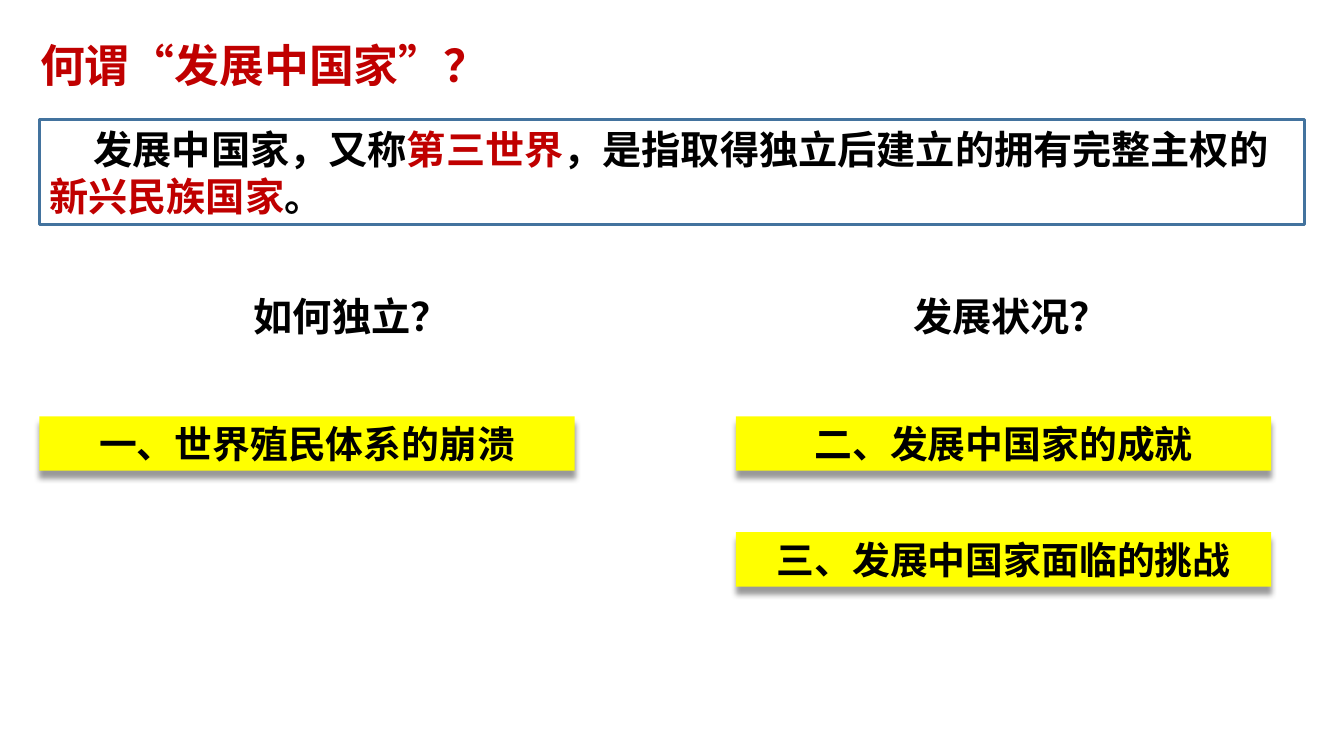
from dataclasses import dataclass

from lxml import etree
from pptx import Presentation
from pptx.dml.color import RGBColor
from pptx.enum.shapes import MSO_SHAPE
from pptx.enum.text import MSO_ANCHOR, PP_ALIGN
from pptx.oxml.ns import qn
from pptx.util import Inches, Pt

RECT = MSO_SHAPE.RECTANGLE
TOP, MIDDLE = MSO_ANCHOR.TOP, MSO_ANCHOR.MIDDLE
LEFT, CENTER = PP_ALIGN.LEFT, PP_ALIGN.CENTER
WIDTH, HEIGHT = Inches(13.33), Inches(7.5)


@dataclass(frozen=True)
class Theme:
    ink: str = "000000"
    red: str = "C00000"
    blue: str = "43739E"
    yellow: str = "FFFF00"
    title: int = 32
    body: int = 28
    label: int = 27
    latin: str = "Arial"
    asian: str = "Noto Sans CJK SC"


THEME = Theme()


def place(left, top, width, height):
    return [round(side * share / 100) for side, share in
            zip((WIDTH, HEIGHT, WIDTH, HEIGHT), (left, top, width, height))]


def write(shape, parts, size, latin=THEME.asian, align=LEFT, anchor=TOP,
          inset=(0.1, 0.05), wrap=True, indent=0, spacing=None, after=0):
    frame = shape.text_frame
    frame.word_wrap = wrap
    frame.vertical_anchor = anchor
    frame.margin_left = frame.margin_right = Inches(inset[0])
    frame.margin_top = frame.margin_bottom = Inches(inset[1])
    para = frame.paragraphs[0]
    para.alignment = align
    para.line_spacing = spacing
    para.space_after = Pt(after)
    if indent:
        para._p.get_or_add_pPr().set("indent", str(Inches(indent)))
    for text, color in parts:
        run = para.add_run()
        run.text = text
        font = run.font
        font.size, font.bold, font.name = Pt(size), True, latin
        font.color.rgb = RGBColor.from_string(color)
        east = etree.SubElement(run._r.get_or_add_rPr(), qn("a:ea"))
        east.set("typeface", THEME.asian)


def add_text(slide, box, text, color, size, **style):
    shape = slide.shapes.add_textbox(*place(*box))
    write(shape, [(text, color)], size, **style)


def add_rect(slide, box, fill=None, line=None):
    shape = slide.shapes.add_shape(RECT, *place(*box))
    shape.shadow.inherit = False
    if fill:
        shape.fill.solid()
        shape.fill.fore_color.rgb = RGBColor.from_string(fill)
    else:
        shape.fill.background()
    if line:
        shape.line.color.rgb = RGBColor.from_string(line)
        shape.line.width = Pt(2.25)
    else:
        shape.line.fill.background()
    return shape


def add_shadow(shape):
    effects = shape.element.spPr.find(qn("a:effectLst"))
    outer = etree.SubElement(
        effects, qn("a:outerShdw"), blurRad=str(Pt(4)), dist=str(Pt(5)),
        dir="5400000", rotWithShape="0")
    color = etree.SubElement(outer, qn("a:srgbClr"), val=THEME.ink)
    etree.SubElement(color, qn("a:alpha"), val="40000")


def add_label(slide, left, top, text):
    shape = add_rect(slide, (left, top, 39.83, 7.2), fill=THEME.yellow)
    add_shadow(shape)
    write(shape, [(text, THEME.ink)], THEME.label, align=CENTER,
          anchor=MIDDLE, inset=(0.07, 0.04))


def main():
    deck = Presentation()
    deck.slide_width, deck.slide_height = WIDTH, HEIGHT
    slide = deck.slides.add_slide(deck.slide_layouts[6])

    add_text(slide, (2.25, 0.8, 35.71, 12.13), "何谓“发展中国家”？",
             THEME.red, THEME.title, spacing=1.5, after=6)

    panel = add_rect(slide, (2.93, 15.87, 94.15, 13.87), line=THEME.blue)
    write(panel, [
        ("发展中国家，又称", THEME.ink),
        ("第三世界", THEME.red),
        ("，是指取得独立后建立的拥有完整主权的", THEME.ink),
        ("新兴民族国家", THEME.red),
        ("。", THEME.ink),
    ], THEME.body, latin=THEME.latin, indent=0.44)

    topics = [
        (2.93, 18.15, "如何独立？", ["一、世界殖民体系的崩溃"]),
        (54.76, 67.22, "发展状况？",
         ["二、发展中国家的成就", "三、发展中国家面临的挑战"]),
    ]
    for left, inner, question, labels in topics:
        add_text(slide, (inner, 38, 16.13, 7.6), question, THEME.ink,
                 THEME.body, latin=THEME.latin, wrap=False)
        for row, label in enumerate(labels):
            add_label(slide, left, 55.07 + 15.33 * row, label)

    deck.save("out.pptx")


if __name__ == "__main__":
    main()
